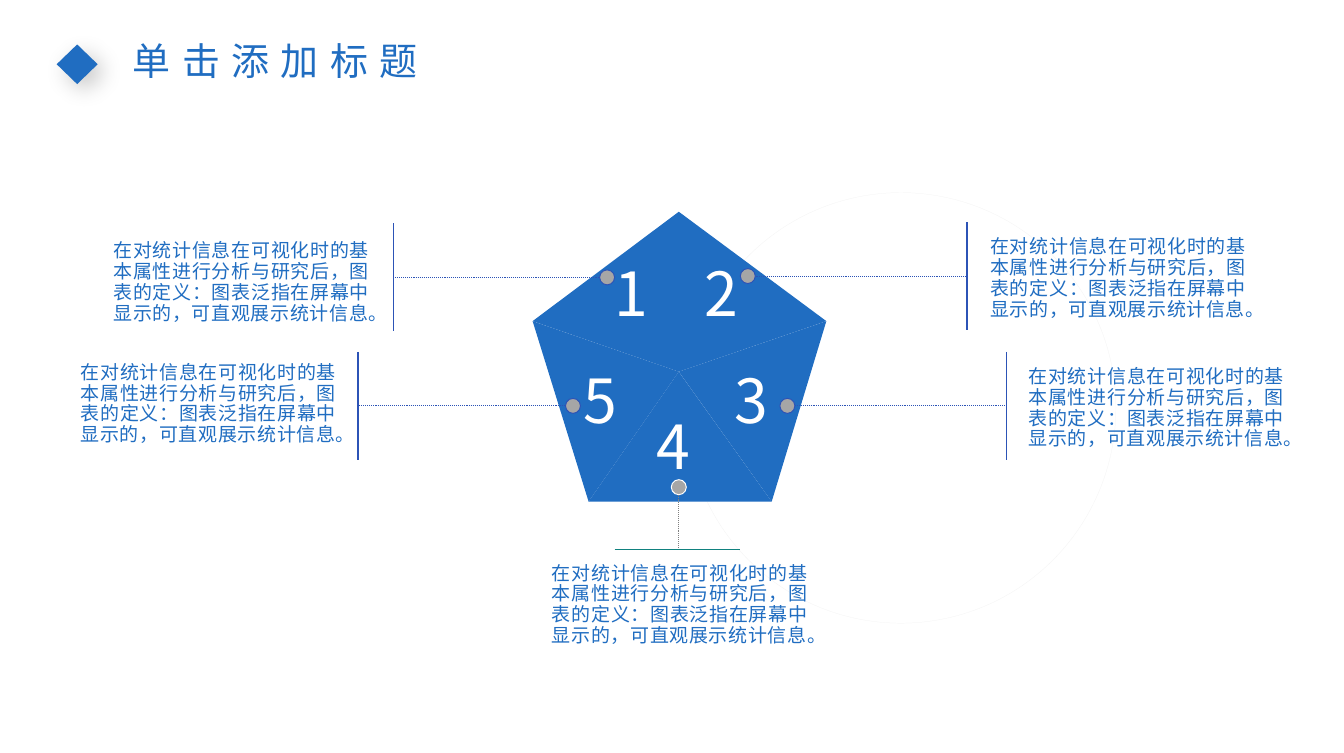
from lxml.etree import SubElement
from pptx import Presentation
from pptx.dml.color import RGBColor
from pptx.enum.dml import MSO_LINE
from pptx.enum.shapes import MSO_CONNECTOR, MSO_SHAPE
from pptx.enum.text import MSO_ANCHOR, PP_ALIGN
from pptx.oxml.ns import qn
from pptx.util import Inches, Pt

FONT = "Noto Sans CJK SC"
BLUE, NAVY, GRAY, WHITE = "206DC1", "2C53B6", "A6A6A6", "FFFFFF"
CAPTION = ("在对统计信息在可视化时的基本属性进行分析与研究后，"
           "图表的定义：图表泛指在屏幕中显示的，可直观展示统计信息。")
CENTER = (4.97, 2.72)
CORNERS = [(3.9, 2.35), (4.97, 1.55), (6.05, 2.35), (5.65, 3.67), (4.31, 3.67)]
NUMBERS = [(4.41, 2.16), (5.07, 2.16), (5.29, 2.94), (4.72, 3.28), (4.18, 2.94)]
CAPTIONS = [(0.74, 1.7), (7.16, 1.67), (7.44, 2.62), (3.95, 4.06), (0.5, 2.59)]
SIDE_CALLOUTS = [(4.445, 2.88, 2.03), (5.475, 7.08, 2.02),
                 (5.765, 7.37, 2.97), (4.195, 2.62, 2.97)]
DOT = 0.11
HALF_BAR = 0.395

NUMBER_FORMAT = dict(size=32, color=WHITE, spacing=12, inset=0.08)
CAPTION_FORMAT = dict(size=10, color=BLUE, spacing=11, inset=0.06)


def rgb(value):
    return RGBColor.from_string(value)


def apply(target, values):
    for name, value in values.items():
        setattr(target, name, value)


def paint(shape, fill=None, line=None, width=0.5):
    shape.shadow.inherit = False
    if fill:
        shape.fill.solid()
        shape.fill.fore_color.rgb = rgb(fill)
    else:
        shape.fill.background()
    if line:
        shape.line.color.rgb = rgb(line)
        shape.line.width = Pt(width)
    else:
        shape.line.fill.background()


def add_figure(slide, kind, box, **style):
    figure = slide.shapes.add_shape(kind, *map(Inches, box))
    paint(figure, **style)
    return figure


def add_rule(slide, start, end, color, width, dash=None):
    rule = slide.shapes.add_connector(
        MSO_CONNECTOR.STRAIGHT, *map(Inches, (*start, *end)))
    rule.line.color.rgb = rgb(color)
    apply(rule.line, {"width": Pt(width), "dash_style": dash})
    SubElement(rule._element.spPr, qn("a:effectLst"))


def add_leader(slide, start, end, color):
    add_rule(slide, start, end, color, 0.5, MSO_LINE.ROUND_DOT)


def add_dot(slide, x, y, outline):
    box = (x - DOT / 2, y - DOT / 2, DOT, DOT)
    add_figure(slide, MSO_SHAPE.OVAL, box, fill=GRAY, line=outline)


def add_wedge(slide, first, second):
    points = [tuple(map(Inches, point)) for point in (CENTER, first, second)]
    builder = slide.shapes.build_freeform(*points[0])
    builder.add_line_segments(points[1:], close=True)
    paint(builder.convert_to_shape(), fill=BLUE)


def write(frame, text, size, color, inset, spacing=None,
          align=PP_ALIGN.JUSTIFY, anchor=MSO_ANCHOR.TOP, tracking=0):
    apply(frame, {
        "word_wrap": True, "vertical_anchor": anchor,
        "margin_left": Inches(0.09), "margin_right": Inches(0.09),
        "margin_top": Inches(inset), "margin_bottom": Inches(inset),
    })
    paragraph = frame.paragraphs[0]
    paragraph.alignment = align
    if spacing:
        paragraph.line_spacing = Pt(spacing)
    paragraph._p.get_or_add_pPr().set("hangingPunct", "1")
    run = paragraph.add_run()
    run.text = text
    run.font.color.rgb = rgb(color)
    apply(run.font, {"size": Pt(size), "name": FONT, "bold": False})
    properties = run._r.get_or_add_rPr()
    properties.set("spc", str(tracking * 100))
    SubElement(properties, qn("a:ea"), typeface=FONT)


def add_text(slide, box, text, style):
    label = slide.shapes.add_textbox(*map(Inches, box))
    write(label.text_frame, text, **style)


def add_side_callout(slide, dot_x, bar_x, y):
    add_leader(slide, (dot_x, y), (bar_x, y), NAVY)
    add_rule(slide, (bar_x, y - HALF_BAR), (bar_x, y + HALF_BAR), NAVY, 0.75)
    add_dot(slide, dot_x, y, NAVY)


def add_bottom_callout(slide):
    x = CENTER[0]
    add_dot(slide, x, 3.565, WHITE)
    add_leader(slide, (x, 3.62), (x, 4.02), "808080")
    add_rule(slide, (4.5, 4.02), (5.42, 4.02), "11817F", 0.75)


def add_title_mark(slide):
    mark = add_figure(slide, MSO_SHAPE.DIAMOND, (0.42, 0.32, 0.29, 0.3), fill=BLUE)
    mark.rotation = 90
    effects = mark._element.spPr.find(qn("a:effectLst"))
    shadow = SubElement(effects, qn("a:outerShdw"), blurRad=str(Pt(12)),
                        dist=str(Pt(5)), dir=str(45 * 60000), rotWithShape="0")
    tone = SubElement(shadow, qn("a:srgbClr"), val="000000")
    SubElement(tone, qn("a:alpha"), val="21000")


def format_title(slide):
    title = slide.shapes.title
    apply(title, {"left": Inches(0.15), "top": Inches(0.22),
                  "width": Inches(3.73), "height": Inches(0.44)})
    write(title.text_frame, "单击添加标题", size=20, color=BLUE, inset=0.05,
          align=PP_ALIGN.CENTER, anchor=MSO_ANCHOR.MIDDLE, tracking=6)


def main():
    deck = Presentation()
    apply(deck, {"slide_width": Inches(9.84), "slide_height": Inches(5.51)})
    slide = deck.slides.add_slide(deck.slide_layouts.get_by_name("Title Only"))
    format_title(slide)
    add_figure(slide, MSO_SHAPE.OVAL, (5.02, 1.41, 3.15, 3.15),
               line="F2F2F2", width=0.1)
    for first, second in zip(CORNERS, CORNERS[1:] + CORNERS[:1]):
        add_wedge(slide, first, second)
    for number, place in enumerate(NUMBERS, 1):
        add_text(slide, (*place, 0.45, 0.33), str(number), NUMBER_FORMAT)
    for callout in SIDE_CALLOUTS:
        add_side_callout(slide, *callout)
    add_bottom_callout(slide)
    for place in CAPTIONS:
        add_text(slide, (*place, 2.05, 0.72), CAPTION, CAPTION_FORMAT)
    add_title_mark(slide)
    deck.save("out.pptx")


if __name__ == "__main__":
    main()
